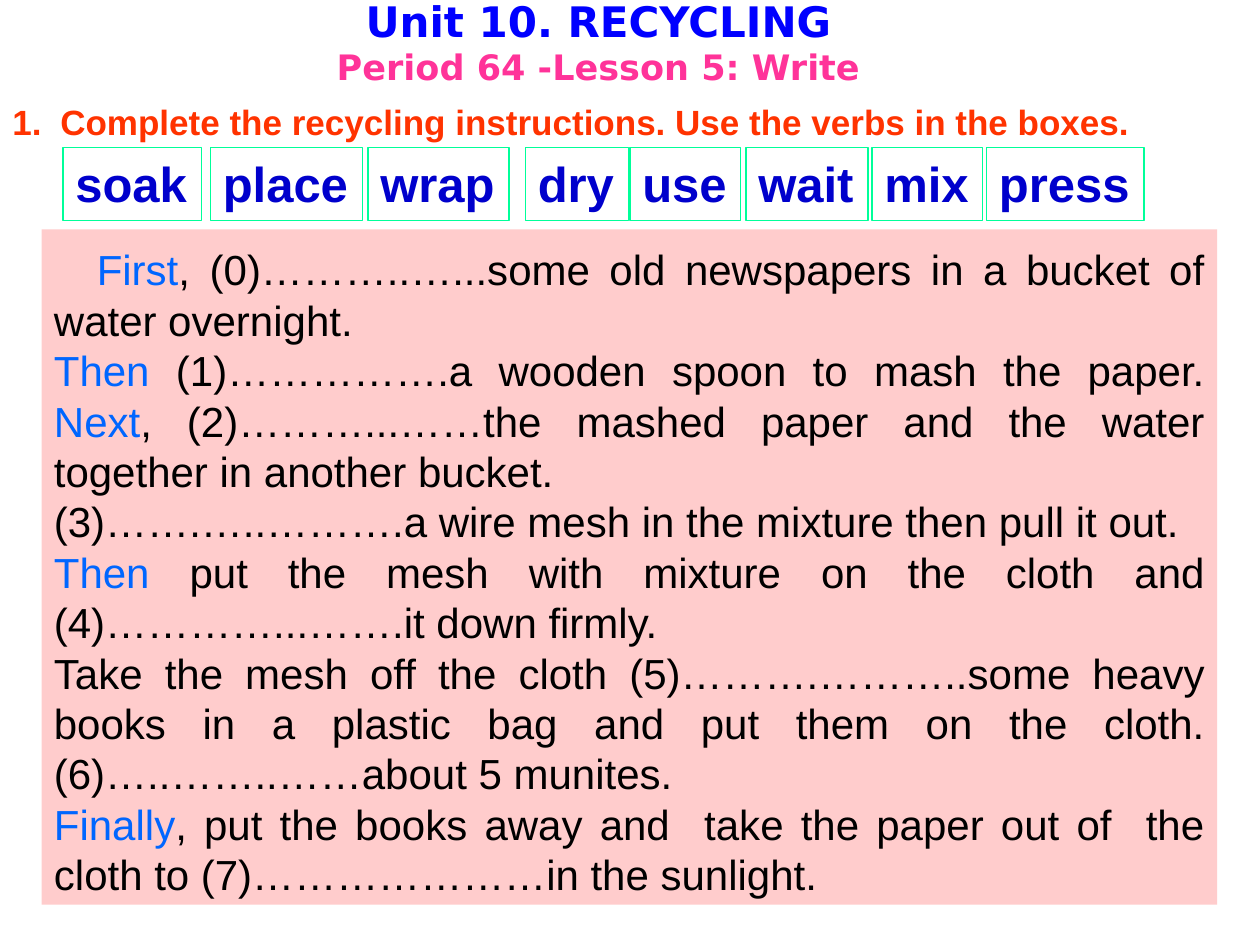
from dataclasses import dataclass

from lxml import etree
from pptx import Presentation
from pptx.dml.color import RGBColor
from pptx.enum import shapes, text
from pptx.oxml.ns import qn
from pptx.util import Inches, Pt


@dataclass(frozen=True)
class Theme:
    title: str = "0000FF"
    subtitle: str = "FF3399"
    task: str = "FF3300"
    verb: str = "0000CC"
    verb_line: str = "00FF99"
    panel: str = "FFCCCC"
    body: str = "000000"
    signal: str = "0066FF"
    title_font: str = "DejaVu Sans"
    font: str = "Arial"
    title_size: int = 24
    small_size: int = 20
    verb_size: int = 28
    body_size: int = 24


THEME = Theme()

VERBS = [
    ("soak", 0.5, 1.1), ("place", 1.67, 1.21), ("wrap", 2.92, 1.12),
    ("dry", 4.17, 0.82), ("use", 5, 0.88), ("wait", 5.92, 0.97),
    ("mix", 6.92, 0.88), ("press", 7.83, 1.25),
]

INSTRUCTIONS = [
    [("First", THEME.signal),
     (", (0)………..…...some old newspapers in a bucket of water overnight. ", THEME.body)],
    [("Then", THEME.signal),
     (" (1)…………….a wooden spoon to mash the paper. ", THEME.body),
     ("Next", THEME.signal),
     (", (2)………...……the mashed paper and the water together in another bucket. ", THEME.body)],
    [("(3)…….…..……….a wire mesh in the mixture then pull it out. ", THEME.body)],
    [("Then", THEME.signal),
     (" put the mesh with mixture on the cloth and (4)…………...…….it down firmly. ", THEME.body)],
    [("Take the mesh off the cloth (5)……….………..some heavy books in a plastic bag "
      "and put them on the cloth. (6)…..……..……about 5 munites. ", THEME.body)],
    [("Finally", THEME.signal),
     (", put the books away and  take the paper out of  the cloth to "
      "(7)…………………in the sunlight.", THEME.body)],
]


def add_run(p, words, size, color, bold=False, font=THEME.font):
    r = p.add_run()
    r.text = words
    r.font.name = font
    r.font.size = Pt(size)
    r.font.bold = bold
    r.font.color.rgb = RGBColor.from_string(color)


def paragraph(tf, index):
    return tf.add_paragraph() if index else tf.paragraphs[0]


def set_indent(p, left, first, number=False):
    props = p._p.get_or_add_pPr()
    props.set("marL", str(Inches(left)))
    props.set("indent", str(Inches(first)))
    if number:
        etree.SubElement(props, qn("a:buFont"), typeface="+mj-lt")
        etree.SubElement(props, qn("a:buAutoNum"), type="arabicPeriod")


def add_box(s, left, top, width, height, fill=None, line=None):
    sp = s.shapes.add_shape(shapes.MSO_SHAPE.RECTANGLE, Inches(left), Inches(top),
                            Inches(width), Inches(height))
    sp.shadow.inherit = False
    if fill:
        sp.fill.solid()
        sp.fill.fore_color.rgb = RGBColor.from_string(fill)
    else:
        sp.fill.background()
    if line:
        sp.line.color.rgb = RGBColor.from_string(line)
        sp.line.width = Pt(0.75)
    else:
        sp.line.fill.background()
    return sp.text_frame


def set_title(s):
    sp = s.shapes.title
    sp.left, sp.top, sp.width, sp.height = Inches(0), Inches(-0.17), Inches(9.5), Inches(1)
    tf = sp.text_frame
    tf.auto_size = text.MSO_AUTO_SIZE.NONE
    tf.vertical_anchor = text.MSO_ANCHOR.MIDDLE
    lines = [("Unit 10. RECYCLING", THEME.title_size, THEME.title),
             ("Period 64 -Lesson 5: Write", THEME.small_size, THEME.subtitle)]
    for i, (words, size, color) in enumerate(lines):
        p = paragraph(tf, i)
        p.alignment = text.PP_ALIGN.CENTER
        add_run(p, words, size, color, bold=True, font=THEME.title_font)


def add_instructions(s):
    tf = add_box(s, 0.33, 1.82, 9.33, 5.36, fill=THEME.panel)
    tf.word_wrap = True
    tf.margin_top = Inches(0.12)
    tf.vertical_anchor = text.MSO_ANCHOR.MIDDLE
    for i, runs in enumerate(INSTRUCTIONS):
        p = paragraph(tf, i)
        p.alignment = text.PP_ALIGN.JUSTIFY
        for words, color in runs:
            add_run(p, words, THEME.body_size, color)
    set_indent(tf.paragraphs[0], 0, 0.34)


def add_verb(s, verb, left, width):
    tf = add_box(s, left, 1.17, width, 0.58, line=THEME.verb_line)
    tf.word_wrap = False
    tf.vertical_anchor = text.MSO_ANCHOR.TOP
    p = tf.paragraphs[0]
    p.alignment = text.PP_ALIGN.LEFT
    add_run(p, verb, THEME.verb_size, THEME.verb, bold=True)


def add_task(s):
    tf = s.shapes.add_textbox(Inches(0), Inches(0.75), Inches(9.42), Inches(0.43)).text_frame
    tf.word_wrap = True
    p = tf.paragraphs[0]
    set_indent(p, 0.38, -0.38, number=True)
    add_run(p, "Complete the recycling instructions. Use the verbs in the boxes.",
            THEME.small_size, THEME.task, bold=True)


def main():
    prs = Presentation()
    prs.slide_width, prs.slide_height = Inches(10), Inches(7.5)
    s = prs.slides.add_slide(prs.slide_layouts[5])
    set_title(s)
    add_instructions(s)
    for verb, left, width in VERBS:
        add_verb(s, verb, left, width)
    add_task(s)
    prs.save("out.pptx")


if __name__ == "__main__":
    main()
